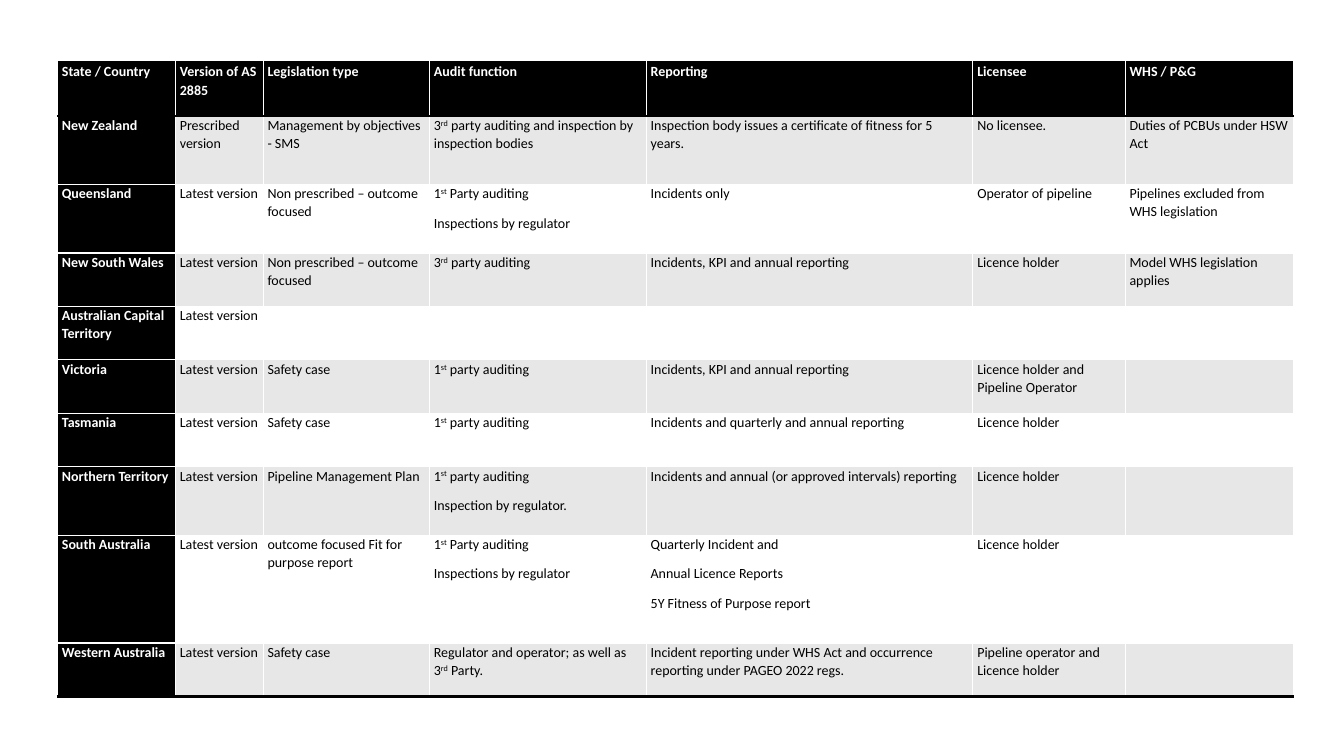
from lxml import etree
from pptx import Presentation, util as u
from pptx.dml.color import RGBColor
from pptx.oxml import ns

HEADER = ["State / Country", "Version of AS 2885", "Legislation type", "Audit function",
          "Reporting", "Licensee", "WHS / P&G"]
LATEST = "Latest version"
HOLDER = "Licence holder"
OUTCOME = "Non prescribed – outcome focused"
KPI = "Incidents, KPI and annual reporting"
FIRST_PARTY = "1^st^ party auditing"
REGULATOR = "1^st^ Party auditing\nInspections by regulator"
JURISDICTIONS = [
    ["New Zealand", "Prescribed version", "Management by objectives - SMS",
     "3^rd^ party auditing and inspection by inspection bodies",
     "Inspection body issues a certificate of fitness for 5 years.",
     "No licensee.", "Duties of PCBUs under HSW Act"],
    ["Queensland", LATEST, OUTCOME, REGULATOR, "Incidents only",
     "Operator of pipeline", "Pipelines excluded from WHS legislation"],
    ["New South Wales", LATEST, OUTCOME, "3^rd^ party auditing", KPI, HOLDER,
     "Model WHS legislation applies"],
    ["Australian Capital Territory", LATEST, "", "", "", "", ""],
    ["Victoria", LATEST, "Safety case", FIRST_PARTY, KPI,
     "Licence holder and Pipeline Operator", ""],
    ["Tasmania", LATEST, "Safety case", FIRST_PARTY,
     "Incidents and quarterly and annual reporting", HOLDER, ""],
    ["Northern Territory", LATEST, "Pipeline Management Plan",
     FIRST_PARTY + "\nInspection by regulator.",
     "Incidents and annual (or approved intervals) reporting", HOLDER, ""],
    ["South Australia", LATEST, "outcome focused Fit for purpose report", REGULATOR,
     "Quarterly Incident and\nAnnual Licence Reports\n5Y Fitness of Purpose report",
     HOLDER, ""],
    ["Western Australia", LATEST, "Safety case",
     "Regulator and operator; as well as 3^rd^ Party.",
     "Incident reporting under WHS Act and occurrence reporting under PAGEO 2022 regs.",
     "Pipeline operator and Licence holder", ""],
]
COLUMN_WIDTHS = [1.17, 0.87, 1.65, 2.15, 3.24, 1.51, 1.67]
SHORT, TALL, TALLEST = 0.53, 0.68, 1.07
ROW_HEIGHTS = [SHORT, TALL, TALL, SHORT, SHORT, SHORT, SHORT, TALL, TALLEST, SHORT]
LEFT, TOP = 0.57, 0.62
COLORS = {"heading": "000000", "heading_text": "FFFFFF", "text": "000000",
          "band": "E7E7E7", "plain": "FFFFFF", "rule": "000000"}


def write_text(frame, content, color, bold=False, size=10, font="Calibri"):
    for index, line in enumerate(content.split("\n")):
        paragraph = frame.add_paragraph() if index else frame.paragraphs[0]
        paragraph.line_spacing = 1.07
        paragraph.space_after = u.Pt(8)
        paragraph.font.size = u.Pt(size)
        for part, piece in enumerate(line.split("^")):
            if not piece:
                continue
            run = paragraph.add_run()
            run.text = piece
            run.font.name = font
            run.font.size = u.Pt(size)
            run.font.bold = bold
            run.font.color.rgb = RGBColor.from_string(color)
            if part % 2:
                run._r.get_or_add_rPr().set("baseline", "30000")


def add_rules(cell, sides):
    properties = cell._tc.get_or_add_tcPr()
    for position, side in enumerate(sides):
        line = etree.Element(ns.qn(f"a:ln{side}"), w=str(u.Pt(2)))
        fill = etree.SubElement(line, ns.qn("a:solidFill"))
        etree.SubElement(fill, ns.qn("a:srgbClr"), val=COLORS["rule"])
        properties.insert(position, line)


def main():
    presentation = Presentation()
    presentation.slide_width, presentation.slide_height = u.Inches(13.33), u.Inches(7.5)
    slide = presentation.slides.add_slide(presentation.slide_layouts[6])
    rows = [HEADER] + JURISDICTIONS
    table = slide.shapes.add_table(
        len(rows), len(HEADER), u.Inches(LEFT), u.Inches(TOP),
        u.Inches(sum(COLUMN_WIDTHS)), u.Inches(sum(ROW_HEIGHTS))).table
    table.first_col = True
    for column, width in zip(table.columns, COLUMN_WIDTHS):
        column.width = u.Inches(width)
    for row, height in zip(table.rows, ROW_HEIGHTS):
        row.height = u.Inches(height)

    for row_index, row in enumerate(rows):
        sides = "TB" if row_index == 0 else "B" if row_index == len(rows) - 1 else ""
        for column_index, content in enumerate(row):
            cell = table.cell(row_index, column_index)
            heading = row_index == 0 or column_index == 0
            background = "heading" if heading else "band" if row_index % 2 else "plain"
            cell.margin_left = cell.margin_right = u.Pt(3.2)
            cell.margin_top = cell.margin_bottom = 0
            cell.fill.solid()
            cell.fill.fore_color.rgb = RGBColor.from_string(COLORS[background])
            write_text(cell.text_frame, content, bold=heading,
                       color=COLORS["heading_text" if heading else "text"])
            add_rules(cell, sides)
    presentation.save("out.pptx")


if __name__ == "__main__":
    main()
